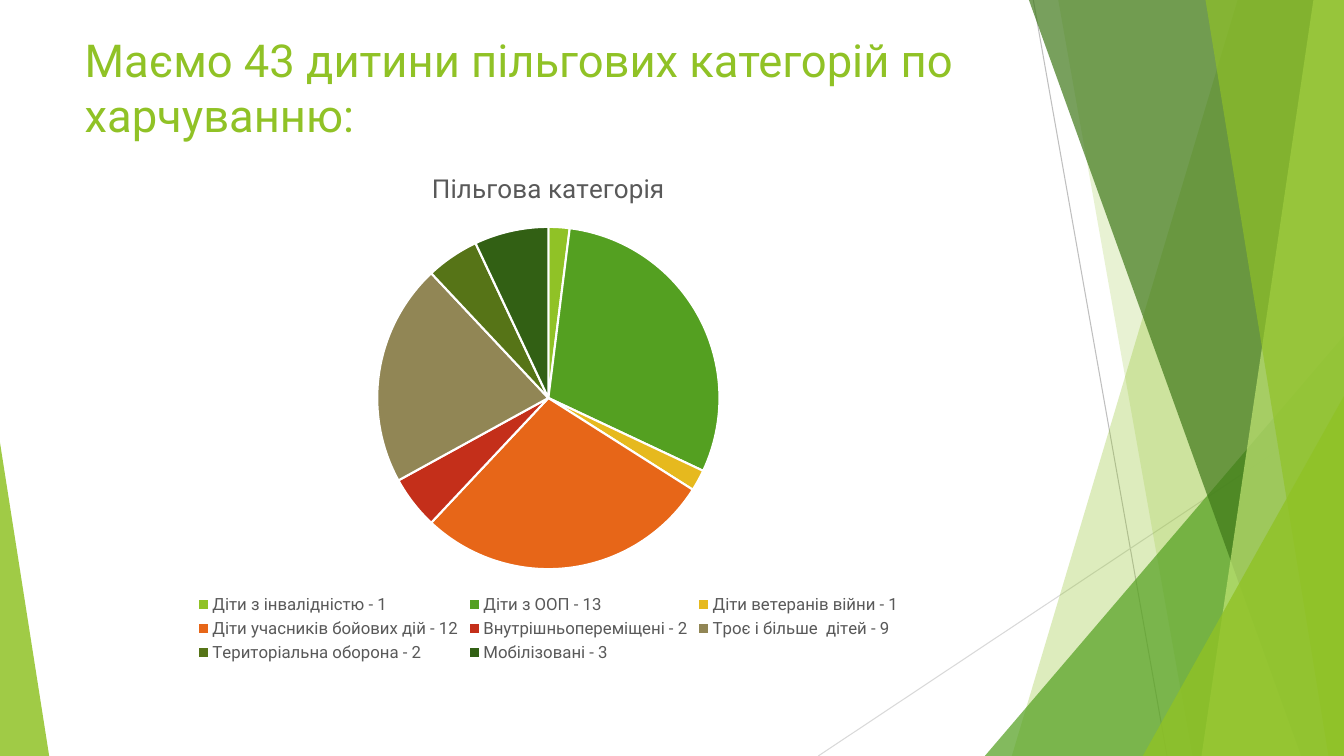
from pptx import Presentation
from pptx.chart.data import CategoryChartData
from pptx.dml.color import RGBColor
from pptx.enum.chart import XL_CHART_TYPE, XL_LEGEND_POSITION
from pptx.enum.shapes import MSO_CONNECTOR, MSO_SHAPE
from pptx.enum.text import MSO_ANCHOR, PP_ALIGN
from pptx.oxml.ns import qn
from pptx.util import Cm, Pt
from lxml import etree

PIE = XL_CHART_TYPE.PIE
BOTTOM = XL_LEGEND_POSITION.BOTTOM
LINE = MSO_CONNECTOR.STRAIGHT
WEDGE = MSO_SHAPE.ISOSCELES_TRIANGLE
TOP = MSO_ANCHOR.TOP
LEFT = PP_ALIGN.LEFT

WHITE = RGBColor(0xFF, 0xFF, 0xFF)
GRAY = RGBColor(0x59, 0x59, 0x59)
SILVER = RGBColor(0xBF, 0xBF, 0xBF)
PALE = RGBColor(0xD9, 0xD9, 0xD9)
LIME = RGBColor(0x90, 0xC2, 0x26)
GREEN = RGBColor(0x54, 0xA0, 0x21)
MOSS = RGBColor(0x3F, 0x78, 0x19)
MINT = RGBColor(0xC0, 0xE4, 0x74)
GOLD = RGBColor(0xE6, 0xB9, 0x1E)
ORANGE = RGBColor(0xE7, 0x66, 0x18)
RED = RGBColor(0xC4, 0x2F, 0x1A)
KHAKI = RGBColor(0x91, 0x86, 0x55)
OLIVE = RGBColor(0x56, 0x74, 0x17)
FOREST = RGBColor(0x32, 0x60, 0x14)

WIDE, HIGH = 33.87, 19.05

GROUPS = [
    ("Діти з інвалідністю - 1", 2, LIME),
    ("Діти з ООП - 13", 30, GREEN),
    ("Діти ветеранів війни - 1", 2, GOLD),
    ("Діти учасників бойових дій - 12", 28, ORANGE),
    ("Внутрішньопереміщені - 2", 5, RED),
    ("Троє і більше  дітей - 9", 21, KHAKI),
    ("Територіальна оборона - 2", 5, OLIVE),
    ("Мобілізовані - 3", 7, FOREST),
]


class Deck:
    """Holds the style and the current slide and draws each kind of element."""

    def __init__(self):
        self.deck = Presentation()
        self.deck.slide_width, self.deck.slide_height = Cm(WIDE), Cm(HIGH)
        self.slide = self.deck.slides.add_slide(self.deck.slide_layouts[5])
        self.shapes = self.slide.shapes

    def style(self, font, size, color):
        font.name, font.size, font.bold = "Roboto", Pt(size), False
        font.color.rgb = color

    def paint(self, shape, color, alpha):
        shape.shadow.inherit = False
        shape.line.fill.background()
        shape.fill.solid()
        shape.fill.fore_color.rgb = color
        tint = shape.fill._xPr.find(".//" + qn("a:srgbClr"))
        etree.SubElement(tint, qn("a:alpha")).set("val", str(alpha * 1000))

    def line(self, x1, y1, x2, y2, color):
        line = self.shapes.add_connector(LINE, Cm(x1), Cm(y1), Cm(x2), Cm(y2))
        line.line.color.rgb = color
        line.line.width = Pt(0.75)
        etree.SubElement(line._element.spPr, qn("a:effectLst"))

    def band(self, top, base, color, alpha):
        form = self.shapes.build_freeform(Cm(top), 0)
        corners = [(WIDE, 0), (WIDE, HIGH), (base, HIGH)]
        form.add_line_segments([(Cm(x), Cm(y)) for x, y in corners])
        self.paint(form.convert_to_shape(), color, alpha)

    def wedge(self, x, y, width, peak, color, alpha):
        shape = self.shapes.add_shape(WEDGE, Cm(x), Cm(y), Cm(width), Cm(HIGH - y))
        shape.adjustments[0] = peak
        self.paint(shape, color, alpha)

    def title(self, text, x, y, width, height):
        box = self.shapes.title
        box.left, box.top, box.width, box.height = map(Cm, (x, y, width, height))
        frame = box.text_frame
        frame.text = text
        frame.word_wrap = True
        frame.vertical_anchor = TOP
        para = frame.paragraphs[0]
        para.alignment = LEFT
        self.style(para.font, 32.4, LIME)

    def pie(self, name, groups, x, y, width, height):
        data = CategoryChartData()
        data.categories = [label for label, _, _ in groups]
        data.add_series(name, [value for _, value, _ in groups])
        chart = self.shapes.add_chart(
            PIE, Cm(x), Cm(y), Cm(width), Cm(height), data).chart
        self.style(chart.font, 10, GRAY)
        chart.has_title = True
        frame = chart.chart_title.text_frame
        frame.text = name
        self.style(frame.paragraphs[0].font, 18.6, GRAY)
        chart.chart_title.include_in_layout = False
        chart.has_legend = True
        chart.legend.position = BOTTOM
        chart.legend.include_in_layout = False
        self.style(chart.legend.font, 12, GRAY)
        plot = chart.plots[0]
        plot.vary_by_categories = True
        for index, (_, _, color) in enumerate(groups):
            slice_ = plot.series[0].points[index].format
            slice_.fill.solid()
            slice_.fill.fore_color.rgb = color
            slice_.line.color.rgb = WHITE
            slice_.line.width = Pt(1.5)


def main():
    page = Deck()
    page.line(26.04, 0, 29.41, HIGH, SILVER)
    page.line(WIDE, 10.24, 20.62, HIGH, PALE)
    page.band(31.19, 25.5, LIME, 30)
    page.band(26.67, 30.05, LIME, 20)
    page.wedge(24.82, 8.46, 9.05, 1, GREEN, 72)
    page.band(25.93, 32.79, MOSS, 70)
    page.band(33.1, 30.28, MINT, 70)
    page.band(30.38, 33.48, LIME, 65)
    page.wedge(28.8, 9.98, 5.07, 1, LIME, 80)
    page.wedge(0, 11.15, 1.24, 0, LIME, 85)
    page.title("Маємо 43 дитини пільгових категорій по харчуванню:",
               1.88, 0.69, 23.88, 2.74)
    page.pie("Пільгова категорія", GROUPS, 1.88, 3.81, 23.88, 12.98)
    page.deck.save("out.pptx")


if __name__ == "__main__":
    main()
